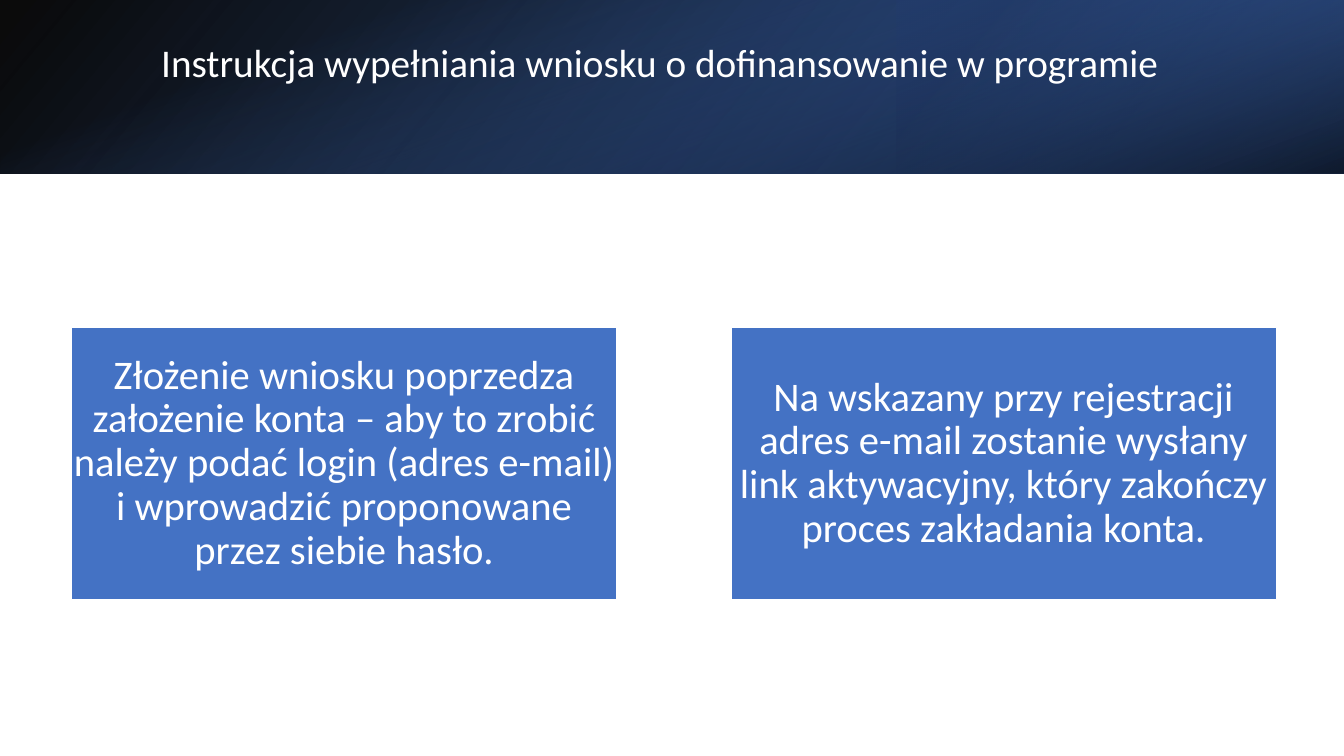
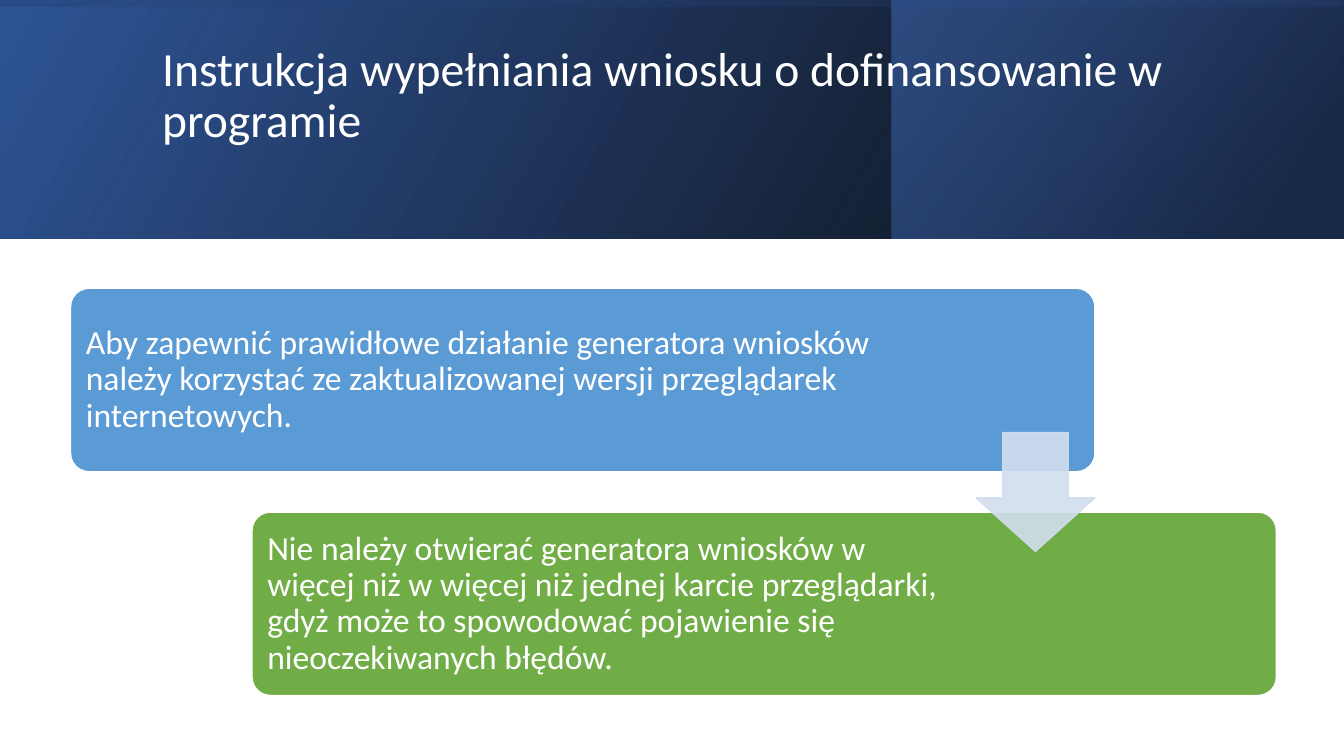
from dataclasses import dataclass

from lxml.etree import SubElement
from pptx import Presentation
from pptx.dml.color import RGBColor
from pptx.enum.shapes import MSO_SHAPE as Preset
from pptx.enum.text import MSO_ANCHOR as Anchor, PP_ALIGN as Align
from pptx.oxml.ns import qn
from pptx.util import Inches, Pt

COLORS = {
    "white": "FFFFFF",
    "black": "000000",
    "navy": "203864",
    "deep": "2F5597",
    "blue": "4472C4",
    "sky": "5B9BD5",
    "green": "70AD47",
    "pale": "D2DEEF",
}
FONT = "Calibri"
TITLE = "Instrukcja wypełniania wniosku o dofinansowanie w programie"
PAGE_WIDTH, PAGE_HEIGHT = 13.33, 7.5


@dataclass
class Rect:
    left: float
    top: float
    width: float
    height: float

    def lengths(self):
        return [Inches(n) for n in (self.left, self.top, self.width, self.height)]


@dataclass
class Stop:
    position: float
    color: str
    opacity: int = 100


@dataclass
class Band:
    rect: Rect
    stops: tuple[Stop, Stop]
    angle: int
    rotation: int = 0
    flipped: bool = True


@dataclass
class Card:
    rect: Rect
    text: str
    color: str
    size: int
    insets: tuple[float, float, float, float]
    align: Align = Align.LEFT
    preset: Preset = Preset.RECTANGLE
    adjustments: tuple[float, ...] = ()


def rgb(name: str) -> RGBColor:
    return RGBColor.from_string(COLORS[name])


def set_opacity(color_element, percent: int) -> None:
    SubElement(color_element, qn("a:alpha")).set("val", str(percent * 1000))


def write_text(frame, text: str, *, size: int, align=Align.LEFT,
               anchor=Anchor.MIDDLE, insets=(0.1, 0.05, 0.1, 0.05)) -> None:
    frame.word_wrap = True
    frame.vertical_anchor = anchor
    (frame.margin_left, frame.margin_top,
     frame.margin_right, frame.margin_bottom) = [Inches(n) for n in insets]
    para = frame.paragraphs[0]
    para.alignment = align
    para.line_spacing = 0.9
    span = para.add_run()
    span.text = text
    span.font.name = FONT
    span.font.size = Pt(size)
    span.font.color.rgb = rgb("white")


def add_band(page, band: Band) -> None:
    box = page.shapes.add_shape(Preset.RECTANGLE, *band.rect.lengths())
    box.shadow.inherit = False
    box.rotation = band.rotation
    if band.flipped:
        box.element.spPr.get_or_add_xfrm().set("flipH", "1")
    box.fill.gradient()
    box.fill.gradient_angle = 360 - band.angle
    for target, stop in zip(box.fill.gradient_stops, band.stops):
        target.position = stop.position
        target.color.rgb = rgb(stop.color)
    for element, stop in zip(box.element.spPr.iter(qn("a:srgbClr")), band.stops):
        set_opacity(element, stop.opacity)
    box.line.fill.background()


def add_filled(page, preset: Preset, rect: Rect, *, fill: str, line: str,
               adjustments: tuple[float, ...] = ()):
    box = page.shapes.add_shape(preset, *rect.lengths())
    box.shadow.inherit = False
    for index, value in enumerate(adjustments):
        box.adjustments[index] = value
    box.fill.solid()
    box.fill.fore_color.rgb = rgb(fill)
    box.line.color.rgb = rgb(line)
    box.line.width = Pt(1)
    return box


def add_card(page, card: Card) -> None:
    box = add_filled(page, card.preset, card.rect, fill=card.color, line="white",
                     adjustments=card.adjustments)
    write_text(box.text_frame, card.text, size=card.size, align=card.align,
               insets=card.insets)


def add_arrow(page, rect: Rect) -> None:
    arrow = add_filled(page, Preset.DOWN_ARROW, rect, fill="pale", line="pale",
                       adjustments=(0.55, 0.45))
    for element in arrow.element.spPr.iter(qn("a:srgbClr")):
        set_opacity(element, 90)


def add_page(deck, bands: list[Band], cards: list[Card], *,
             title_rect: Rect, title_size: int):
    page = deck.slides.add_slide(deck.slide_layouts[6])
    for band in bands:
        add_band(page, band)
    title = page.shapes.add_textbox(*title_rect.lengths())
    write_text(title.text_frame, TITLE, size=title_size, anchor=Anchor.TOP)
    for card in cards:
        add_card(page, card)
    return page


def header_bands(height: float, *, base_angle: int, side: Rect, side_rotation: int,
                 side_opacity: int, cover: Band) -> list[Band]:
    offset = (PAGE_WIDTH - height) / 2
    cover.rect = Rect(offset, -offset, height, PAGE_WIDTH)
    return [
        Band(Rect(0, 0, PAGE_WIDTH, height),
             (Stop(0, "black", 96), Stop(1, "deep")), base_angle),
        Band(side, (Stop(0.19, "navy", 68), Stop(1, "blue", side_opacity)), 320,
             side_rotation),
        cover,
    ]


def build_account_page(deck) -> None:
    height = 1.72
    bands = header_bands(
        height, base_angle=140, side=Rect(8.89, 0, 4.44, height),
        side_rotation=180, side_opacity=79,
        cover=Band(None, (Stop(0.23, "blue", 0), Stop(0.99, "black", 74)), 340,
                   90, False))
    texts = (
        "Złożenie wniosku poprzedza założenie konta – aby to zrobić należy podać "
        "login (adres e-mail) i wprowadzić proponowane przez siebie hasło.",
        "Na wskazany przy rejestracji adres e-mail zostanie wysłany link "
        "aktywacyjny, który zakończy proces zakładania konta.",
    )
    cards = [
        Card(Rect(0.71 + index * 6.54, 3.25, 5.41, 2.7), text, "blue", 29,
             (0.02,) * 4, Align.CENTER)
        for index, text in enumerate(texts)
    ]
    add_page(deck, bands, cards, title_rect=Rect(1.5, 0.38, 10.98, 0.96),
             title_size=28)


def build_browser_page(deck) -> None:
    height = 2.37
    bands = header_bands(
        height, base_angle=330, side=Rect(8.84, 0, 4.48, height),
        side_rotation=0, side_opacity=48,
        cover=Band(None, (Stop(0.23, "deep", 16), Stop(0.99, "black", 45)), 350,
                   270))
    steps = (
        ("Aby zapewnić prawidłowe działanie generatora wniosków należy korzystać "
         "ze zaktualizowanej wersji przeglądarek internetowych.", "sky", 1.87),
        ("Nie należy otwierać generatora wniosków w więcej niż w więcej niż jednej "
         "karcie przeglądarki, gdyż może to spowodować pojawienie się "
         "nieoczekiwanych błędów.", "green", 3.08),
    )
    cards = [
        Card(Rect(0.7 + index * 1.8, 2.86 + index * 2.22, 10.16, 1.82), text, color,
             24, (0.1, 0.1, right_inset, 0.1), preset=Preset.ROUNDED_RECTANGLE,
             adjustments=(0.1,))
        for index, (text, color, right_inset) in enumerate(steps)
    ]
    page = add_page(deck, bands, cards, title_rect=Rect(1.51, 0.4, 10.63, 1.7),
                    title_size=34)
    add_arrow(page, Rect(9.68, 4.29, 1.18, 1.18))


def main() -> None:
    deck = Presentation()
    deck.slide_width = Inches(PAGE_WIDTH)
    deck.slide_height = Inches(PAGE_HEIGHT)
    build_account_page(deck)
    build_browser_page(deck)
    deck.save("out.pptx")


if __name__ == "__main__":
    main()
